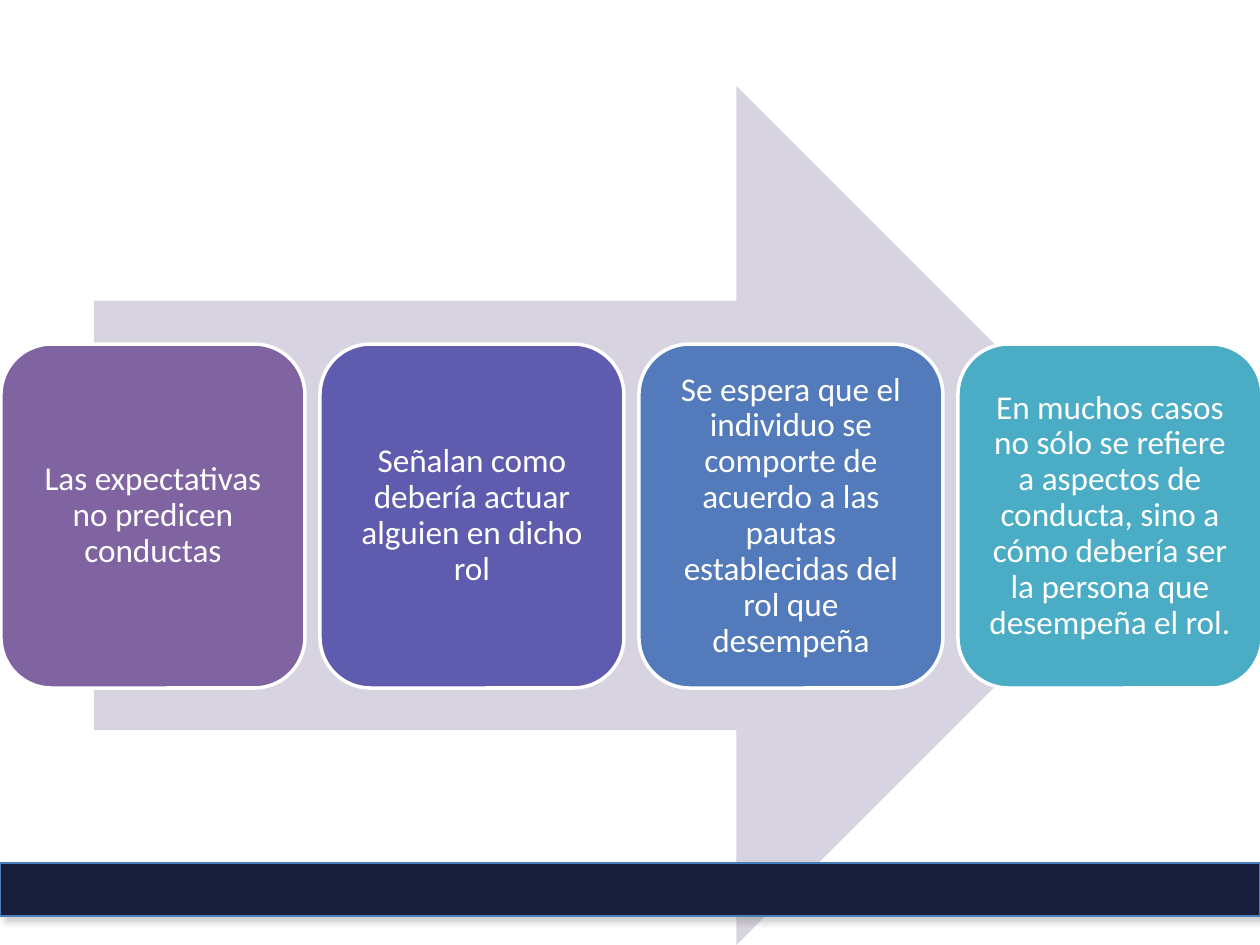
"""Build a slide with four role-expectation cards over a wide arrow."""
import pptx
import pptx.util
import pptx.dml.color
import pptx.enum.shapes
import pptx.enum.text
import pptx.oxml
from dataclasses import dataclass

CARDS = [
    ("Las expectativas no predicen conductas", "8064A2"),
    ("Señalan como debería actuar alguien en dicho rol", "5F5BAE"),
    ("Se espera que el individuo se comporte de acuerdo a las pautas "
     "establecidas del rol que desempeña", "537ABA"),
    ("En muchos casos no sólo se refiere a aspectos de conducta, sino a cómo "
     "debería ser la persona que desempeña el rol.", "4BACC6"),
]
SLIDE = (1260, 945)
ARROW = (94, 86, 1072, 859)
BAR = (0, 863, 1260, 53)
CARD = (1, 344, 304, 344)
PITCH = 319
INSET = 10
SHADOW = (
    '<a:effectLst xmlns:a="http://schemas.openxmlformats.org/drawingml/2006/main">'
    '<a:outerShdw blurRad="50800" dist="38100" dir="2700000" rotWithShape="0">'
    '<a:srgbClr val="808080"><a:alpha val="40000"/></a:srgbClr>'
    '</a:outerShdw></a:effectLst>'
)


@dataclass(frozen=True)
class Theme:
    font: str = "Calibri"
    size: int = 19
    text: str = "FFFFFF"
    arrow: str = "D8D3E0"
    bar: str = "191E3C"
    bar_line: str = "4A7EBB"
    card_line: str = "FFFFFF"


THEME = Theme()
KIND = pptx.enum.shapes.MSO_SHAPE


def px(n):
    return pptx.util.Emu(round(n * 914400 / 126))


def rgb(value):
    return pptx.dml.color.RGBColor.from_string(value)


def assign(target, values):
    for name, value in values.items():
        setattr(target, name, value)


def add_box(s, kind, box, fill, line=None, width=0):
    sp = s.shapes.add_shape(kind, *map(px, box))
    sp.shadow.inherit = False
    sp.fill.solid()
    sp.fill.fore_color.rgb = rgb(fill)
    if line:
        sp.line.color.rgb = rgb(line)
        sp.line.width = pptx.util.Pt(width)
    else:
        sp.line.fill.background()
    return sp


def add_text(sp, text):
    tf = sp.text_frame
    assign(tf, {
        "word_wrap": True,
        "vertical_anchor": pptx.enum.text.MSO_ANCHOR.MIDDLE,
        "margin_left": px(INSET), "margin_right": px(INSET),
        "margin_top": px(INSET), "margin_bottom": px(INSET),
    })
    p = tf.paragraphs[0]
    assign(p, {"alignment": pptx.enum.text.PP_ALIGN.CENTER, "line_spacing": 0.9})
    r = p.add_run()
    r.text = text
    assign(r.font, {"name": THEME.font, "size": pptx.util.Pt(THEME.size)})
    r.font.color.rgb = rgb(THEME.text)


def main():
    prs = pptx.Presentation()
    prs.slide_width, prs.slide_height = map(px, SLIDE)
    s = prs.slides.add_slide(prs.slide_layouts[6])
    add_box(s, KIND.RIGHT_ARROW, ARROW, THEME.arrow)
    left, top, width, height = CARD
    for i, (text, fill) in enumerate(CARDS):
        box = (left + i * PITCH, top, width, height)
        sp = add_box(s, KIND.ROUNDED_RECTANGLE, box, fill, THEME.card_line, 2)
        add_text(sp, text)
    bar = add_box(s, KIND.RECTANGLE, BAR, THEME.bar, THEME.bar_line, 0.75)
    bar.shadow.inherit = True
    bar.element.spPr.append(pptx.oxml.parse_xml(SHADOW))
    prs.save("out.pptx")


if __name__ == "__main__":
    main()
